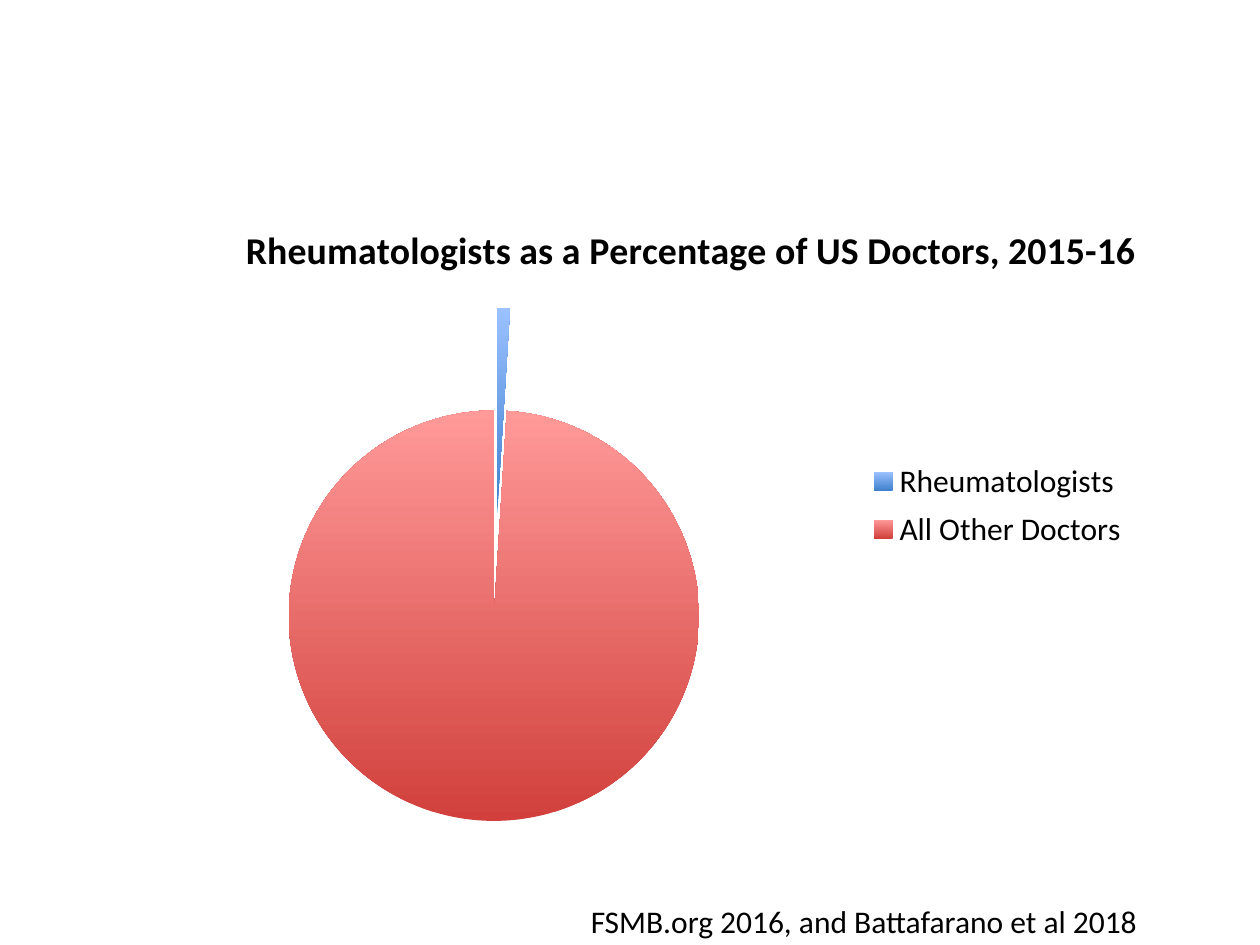
"""Build a slide with a pie chart of rheumatologists among US doctors."""
import pptx
import pptx.chart.data
import pptx.dml.color
import pptx.enum.chart
import pptx.enum.text
import pptx.oxml
import pptx.util
from pptx.util import Cm

FONT = "Calibri"
GRADIENTS = [("3F80CD", "9BC1FF"), ("D1403C", "FF9A99")]


def rgb(value):
    """Return a colour from a hex string."""
    return pptx.dml.color.RGBColor.from_string(value)


def style(font, size, bold=False):
    """Set the slide's typeface in black."""
    font.name = FONT
    font.size = pptx.util.Pt(size)
    font.bold = bold
    font.color.rgb = rgb("000000")


def chart_xml(tag, content="", value=None):
    """Return a new chart element."""
    attr = "" if value is None else f' val="{value}"'
    ns = "http://schemas.openxmlformats.org/drawingml/2006/chart"
    return pptx.oxml.parse_xml(f'<c:{tag} xmlns:c="{ns}"{attr}>{content}</c:{tag}>')


def place(parent, before, inner=False, **fractions):
    """Give a chart part a manual layout after the named child."""
    for old in parent.xpath("c:layout"):
        parent.remove(old)
    modes = '<c:layoutTarget val="inner"/>' if inner else ""
    modes += '<c:xMode val="edge"/><c:yMode val="edge"/>'
    sizes = "".join(f'<c:{k} val="{v}"/>' for k, v in fractions.items())
    layout = chart_xml("layout", f"<c:manualLayout>{modes}{sizes}</c:manualLayout>")
    if before:
        parent.xpath(before)[0].addnext(layout)
    else:
        parent.insert(0, layout)


def add_pie(s, left, top, width, height):
    """Add the exploded pie chart with its title and legend."""
    data = pptx.chart.data.CategoryChartData()
    data.categories = ["Rheumatologists", "All Other Doctors"]
    data.add_series("Series 1", (1, 99))
    chart = s.shapes.add_chart(
        pptx.enum.chart.XL_CHART_TYPE.PIE, left, top, width, height, data
    ).chart
    style(chart.font, 18)

    chart.has_title = True
    tf = chart.chart_title.text_frame
    tf.text = "Rheumatologists as a Percentage of US Doctors, 2015-16"
    style(tf.paragraphs[0].runs[0].font, 21.6, True)
    chart.has_legend = True
    chart.legend.position = pptx.enum.chart.XL_LEGEND_POSITION.RIGHT
    chart.legend.include_in_layout = False
    style(chart.legend.font, 18)

    plot = chart.plots[0]
    plot.vary_by_categories = True
    series = plot.series[0]
    for i, colors in enumerate(GRADIENTS):
        fill = series.points[i].format.fill
        fill.gradient()
        fill.gradient_angle = 90
        for stop, color in zip(fill.gradient_stops, colors):
            stop.color.rgb = rgb(color)
    series._element.xpath("c:dPt")[0].addprevious(chart_xml("explosion", value=25))

    root = chart._chartSpace
    place(root.xpath("c:chart/c:title")[0], "c:tx", x=0.15, y=0.01)
    place(root.xpath("c:chart/c:legend")[0], "c:legendPos",
          x=0.7, y=0.37, w=0.23, h=0.16)
    place(root.xpath("c:chart/c:plotArea")[0], None, inner=True,
          x=0.15, y=0.15, w=0.45, h=0.78)


def add_citation(s, left, top, width, height):
    """Add the source line below the chart."""
    tf = s.shapes.add_textbox(left, top, width, height).text_frame
    tf.word_wrap = False
    tf.auto_size = pptx.enum.text.MSO_AUTO_SIZE.SHAPE_TO_FIT_TEXT
    tf.text = "FSMB.org 2016, and Battafarano et al 2018"
    style(tf.paragraphs[0].runs[0].font, 18)


def main():
    """Build and save the presentation."""
    prs = pptx.Presentation()
    prs.slide_width, prs.slide_height = Cm(25.4), Cm(19.05)
    s = prs.slides.add_slide(prs.slide_layouts[6])
    add_citation(s, Cm(11.66), Cm(18.06), Cm(11.71), Cm(1.02))
    add_pie(s, Cm(1.37), Cm(4.22), Cm(22.99), Cm(13.26))
    prs.save("out.pptx")


if __name__ == "__main__":
    main()
